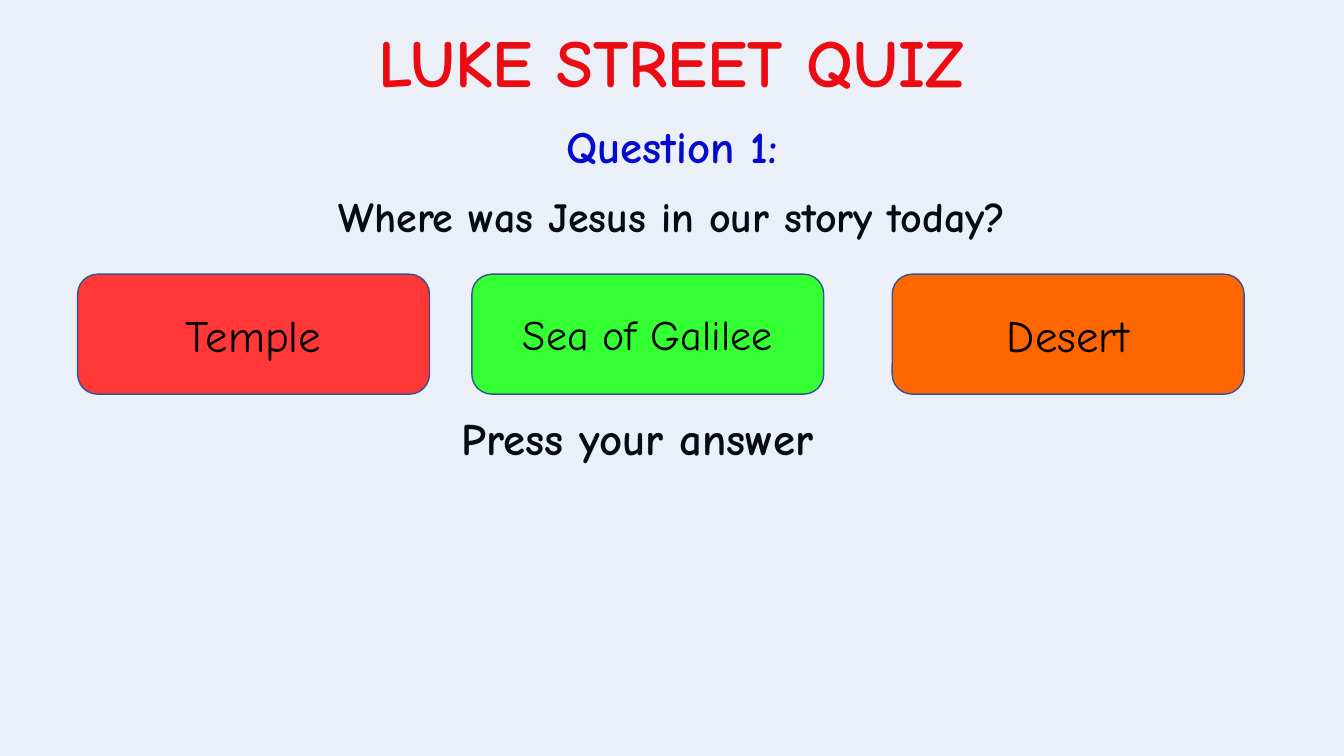
import pptx
import pptx.util
import pptx.dml.color
import pptx.enum.shapes
import pptx.enum.text
import pptx.oxml.ns
import lxml.etree

SHAPE = pptx.enum.shapes.MSO_SHAPE
ALIGN = pptx.enum.text.PP_ALIGN
ANCHOR = pptx.enum.text.MSO_ANCHOR
FIT = pptx.enum.text.MSO_AUTO_SIZE
Pt = pptx.util.Pt

prs = pptx.Presentation()
prs.slide_width = pptx.util.Inches(13.33)
prs.slide_height = pptx.util.Inches(7.5)
s = prs.slides.add_slide(prs.slide_layouts[6])


def box(kind, left, top, width, height, fill=None):
    """Add a text box (kind None) or preset shape, placed in percent of the slide."""
    at = [int(share * side / 100) for share, side in zip(
        (left, top, width, height), (prs.slide_width, prs.slide_height) * 2)]
    if kind is None:
        return s.shapes.add_textbox(*at)
    sp = s.shapes.add_shape(kind, *at)
    sp.shadow.inherit = False
    sp.fill.solid()
    sp.fill.fore_color.rgb = pptx.dml.color.RGBColor.from_string(fill)
    sp.line.color.rgb = pptx.dml.color.RGBColor.from_string("325491")
    sp.line.width = Pt(1)
    return sp


def write(sp, text, size, color, bold=False, align=ALIGN.CENTER):
    """Write one paragraph in the shape and return it."""
    tf = sp.text_frame
    tf.word_wrap = True
    p = tf.paragraphs[0]
    p.alignment = align
    r = p.add_run()
    r.text = text
    r.font.name = "Comic Neue"
    r.font.size = Pt(size)
    r.font.bold = bold
    r.font.color.rgb = pptx.dml.color.RGBColor.from_string(color)
    return p


title = box(None, 23.41, 2, 53.11, 12.13)
write(title, "LUKE STREET QUIZ", 48, "FF0000", True)
title.text_frame.word_wrap = False
title.text_frame.auto_size = FIT.SHAPE_TO_FIT_TEXT

question = box(None, 1.28, 25.6, 97.52, 15.87)
p = write(question, "Where was Jesus in our story today?", 30, "000000", True)
p.line_spacing = Pt(30)
p.space_before = Pt(10)

prompt = box(None, 33.61, 54.53, 50.49, 9.6)
p = write(prompt, "Press your answer", 32, "000000", True, ALIGN.LEFT)
p.line_spacing = 0.9
p.space_before = Pt(7.5)

number = box(None, 33.46, 15.07, 33.08, 8.53)
write(number, "Question 1:", 32, "0000CC", True)
number.text_frame.auto_size = FIT.SHAPE_TO_FIT_TEXT

# Pale blue tint over the whole slide
tint = box(SHAPE.RECTANGLE, -1.65, -8.13, 106.45, 116.4, "4472C4")
color = tint.fill._xPr.find(".//" + pptx.oxml.ns.qn("a:srgbClr"))
lxml.etree.SubElement(color, pptx.oxml.ns.qn("a:alpha"), val="10000")

answers = [
    (5.78, "Temple", 32, "FF3737"),
    (35.11, "Sea of Galilee", 30, "33FF33"),
    (66.39, "Desert", 32, "FF6600"),
]
for left, text, size, fill in answers:
    button = box(SHAPE.ROUNDED_RECTANGLE, left, 36.27, 26.18, 15.87, fill)
    button.text_frame.vertical_anchor = ANCHOR.MIDDLE
    write(button, text, size, "000000")

prs.save("out.pptx")
